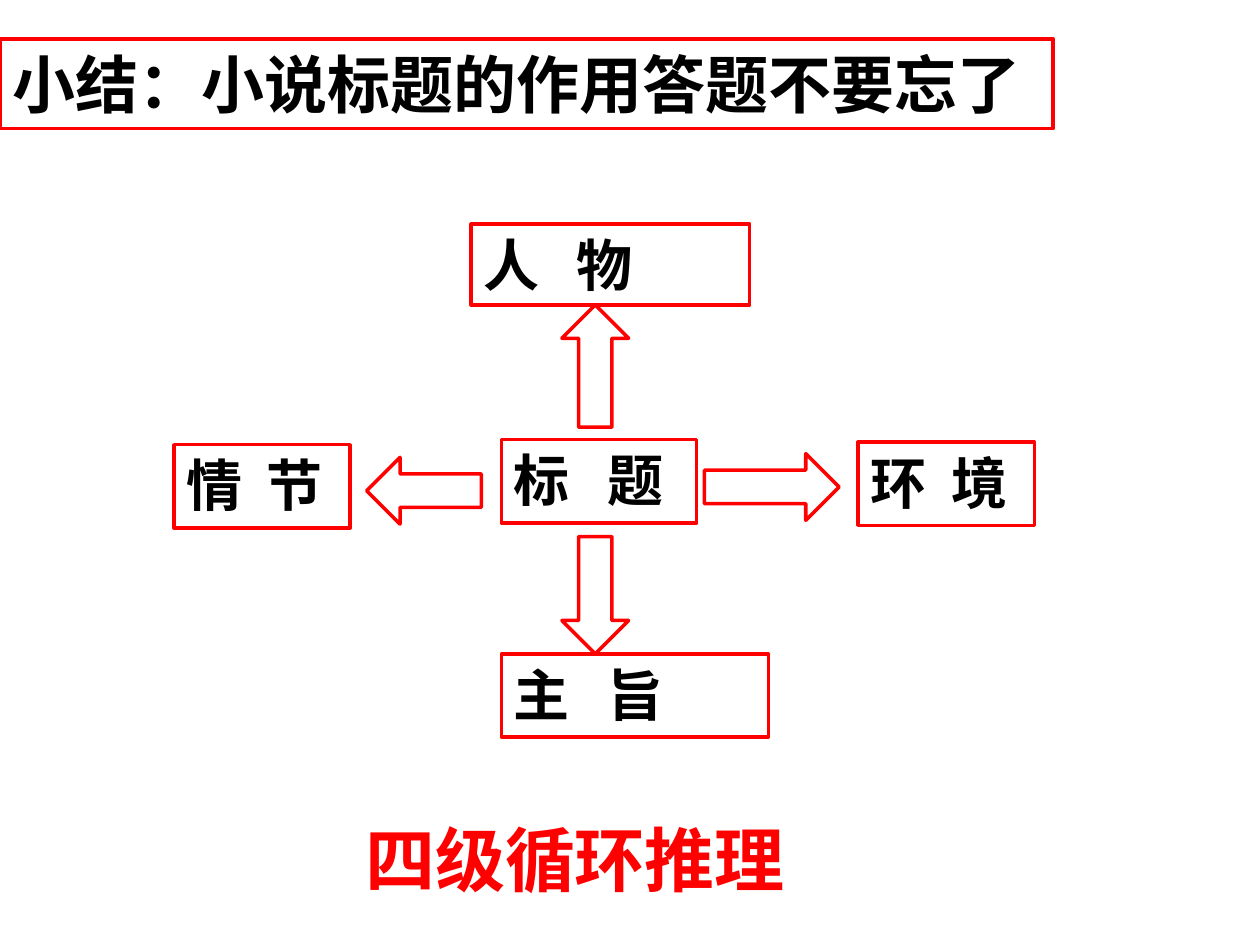
from dataclasses import dataclass

from pptx import Presentation
from pptx import util as u
from pptx.dml.color import RGBColor
from pptx.enum import shapes, text
from pptx.oxml.ns import qn
from lxml import etree


@dataclass(frozen=True)
class Theme:
    """Colours, fonts and type sizes of the slide."""
    paper: RGBColor = RGBColor(255, 255, 255)
    ink: RGBColor = RGBColor(0, 0, 0)
    accent: RGBColor = RGBColor(255, 0, 0)
    cjk: str = "Noto Sans CJK SC"
    latin: str = "Arial"
    title: int = 36
    label: int = 32
    conclusion: int = 40
    outline: int = 2


def write_text(shape, content, *, size, color, font, tab=None):
    """Put one bold line in a shape, with an optional tab stop in inches."""
    frame = shape.text_frame
    frame.word_wrap = True
    frame.auto_size = text.MSO_AUTO_SIZE.NONE
    frame.vertical_anchor = text.MSO_ANCHOR.TOP
    paragraph = frame.paragraphs[0]
    paragraph.alignment = text.PP_ALIGN.LEFT
    if tab:
        stops = etree.SubElement(paragraph._p.get_or_add_pPr(), qn("a:tabLst"))
        etree.SubElement(stops, qn("a:tab"), pos=str(u.Inches(tab)), algn="l")
    run = paragraph.add_run()
    run.text = content
    run.font.size = u.Pt(size)
    run.font.bold = True
    run.font.color.rgb = color
    run.font.name = font
    etree.SubElement(run._r.get_or_add_rPr(), qn("a:ea"), typeface=Theme.cjk)


class SlideBuilder:
    """Draws styled elements on the current slide."""

    def __init__(self, slide, theme):
        self.slide = slide
        self.theme = theme

    def outlined(self, kind, bounds):
        """Add a white shape with a red outline."""
        shape = self.slide.shapes.add_shape(kind, *map(u.Inches, bounds))
        shape.shadow.inherit = False
        shape.fill.solid()
        shape.fill.fore_color.rgb = self.theme.paper
        shape.line.color.rgb = self.theme.accent
        shape.line.width = u.Pt(self.theme.outline)
        return shape

    def box(self, content, bounds, size, tab=None):
        """Add an outlined rectangle with text."""
        shape = self.outlined(shapes.MSO_SHAPE.RECTANGLE, bounds)
        write_text(shape, content, size=size, color=self.theme.ink,
                   font=self.theme.cjk, tab=tab)

    def arrow(self, kind, bounds):
        """Add an outlined block arrow."""
        self.outlined(kind, bounds)

    def caption(self, content, bounds):
        """Add the red concluding line."""
        shape = self.slide.shapes.add_textbox(*map(u.Inches, bounds))
        write_text(shape, content, size=self.theme.conclusion,
                   color=self.theme.accent, font=self.theme.latin)


def main():
    """Build and save the presentation."""
    presentation = Presentation()
    presentation.slide_width = u.Inches(10)
    presentation.slide_height = u.Inches(7.5)
    slide = presentation.slides.add_slide(presentation.slide_layouts[6])
    theme = Theme()
    builder = SlideBuilder(slide, theme)

    builder.box("小结：小说标题的作用答题不要忘了", (0, 0.31, 8.36, 0.71), theme.title)

    wide, narrow = 0.74, 0.64
    for content, bounds, tab in (
        ("人\t物", (3.74, 1.78, 2.21, 0.64), wide),
        ("情\t节", (1.38, 3.53, 1.4, 0.66), narrow),
        ("环\t境", (6.81, 3.51, 1.4, 0.66), narrow),
        ("主\t旨", (3.98, 5.19, 2.12, 0.66), wide),
        ("标\t题", (3.98, 3.49, 1.55, 0.66), wide),
    ):
        builder.box(content, bounds, theme.label, tab)

    for kind, bounds in (
        (shapes.MSO_SHAPE.UP_ARROW, (4.46, 2.42, 0.53, 0.97)),
        (shapes.MSO_SHAPE.LEFT_ARROW, (2.91, 3.63, 0.91, 0.53)),
        (shapes.MSO_SHAPE.RIGHT_ARROW, (5.59, 3.6, 1.07, 0.53)),
        (shapes.MSO_SHAPE.DOWN_ARROW, (4.46, 4.26, 0.53, 0.93)),
    ):
        builder.arrow(kind, bounds)

    builder.caption("四级循环推理", (2.8, 6.43, 4.09, 0.77))
    presentation.save("out.pptx")


if __name__ == "__main__":
    main()
